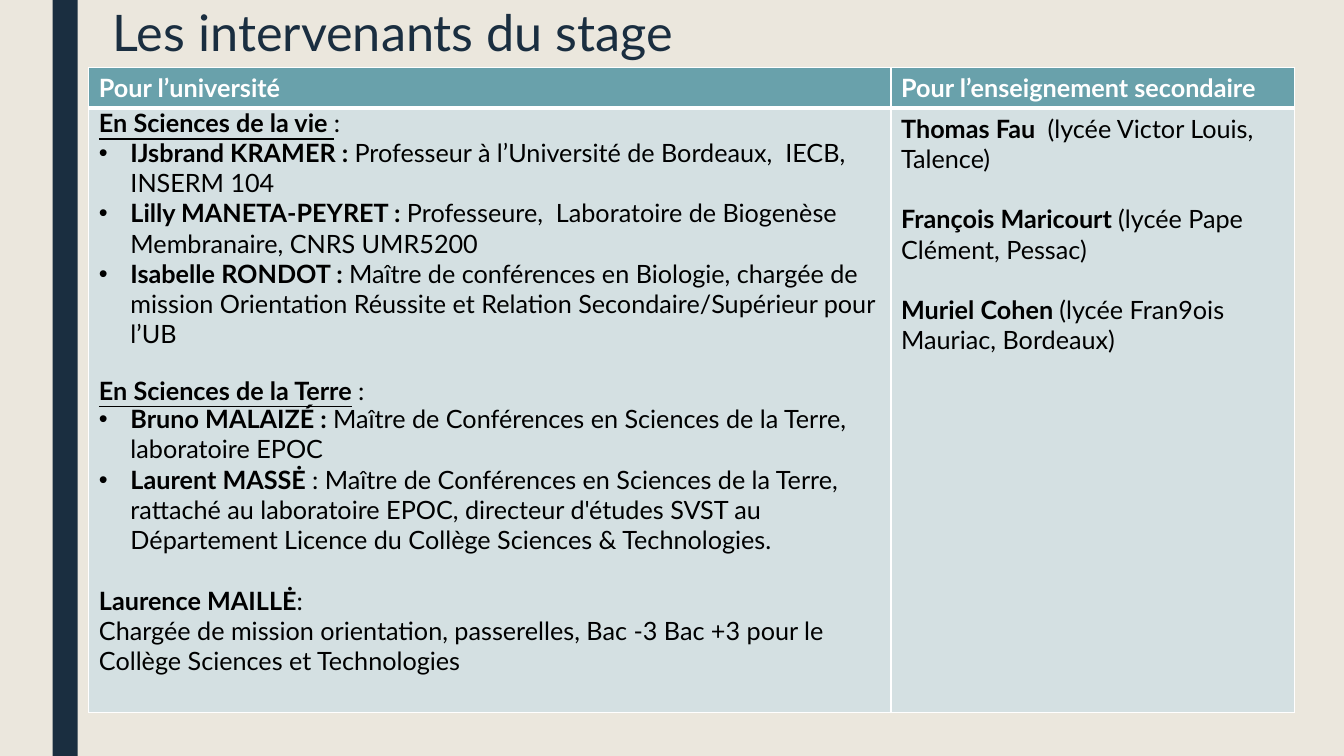
"""Build the slide that lists the speakers of the training course."""
from pptx import Presentation
from pptx.dml.color import RGBColor
from pptx.enum.shapes import MSO_SHAPE as SHAPE
from pptx.enum.text import MSO_ANCHOR as ANCHOR, PP_ALIGN as ALIGN
from pptx.oxml import parse_xml
from pptx.util import Pt

NS = 'xmlns:a="http://schemas.openxmlformats.org/drawingml/2006/main"'
NAVY, TEAL, PALE, WHITE, BLACK = "1A2E40", "69A1AB", "D4E0E2", "FFFFFF", "000000"


def color(code):
    """Turn a hex string into a colour."""
    return RGBColor.from_string(code)


def add_run(para, text, size, code, bold=False, line=False):
    """Add one formatted run to a paragraph."""
    run = para.add_run()
    run.text = text
    font = run.font
    font.name, font.size, font.bold, font.underline = "Lato", Pt(size), bold, line
    font.color.rgb = color(code)


prs = Presentation()
prs.slide_width, prs.slide_height = Pt(960), Pt(540)
slide = prs.slides.add_slide(prs.slide_layouts[5])
slide.background.fill.solid()
slide.background.fill.fore_color.rgb = color("EBE7DD")

bar = slide.shapes.add_shape(SHAPE.RECTANGLE, Pt(37.5), Pt(0), Pt(18), Pt(540))
bar.shadow.inherit = False
bar.fill.solid()
bar.fill.fore_color.rgb = color(NAVY)
bar.line.fill.background()

title = slide.shapes.title
title.left, title.top, title.width, title.height = Pt(73.5), Pt(1.5), Pt(792), Pt(47.5)
frame = title.text_frame
frame.word_wrap = True
frame.vertical_anchor = ANCHOR.MIDDLE
para = frame.paragraphs[0]
para.alignment, para.line_spacing = ALIGN.LEFT, 0.89
add_run(para, "Les intervenants du stage", 36, NAVY)

# Each entry: kind, bold text, plain text, space before, line spacing
staff = [
    ("head", "En Sciences de la vie ", ":", 0, 0.8),
    ("item", "IJsbrand KRAMER : ",
     "Professeur à l’Université de Bordeaux,  IECB, INSERM 104", 0, 1),
    ("item", "Lilly MANETA-PEYRET : ",
     "Professeure,  Laboratoire de Biogenèse Membranaire, CNRS UMR5200", 0, 1),
    ("item", "Isabelle RONDOT : ",
     "Maître de conférences en Biologie, chargée de mission Orientation Réussite "
     "et Relation Secondaire/Supérieur pour l’UB", 0, 1),
    ("head", "En Sciences de la Terre", " :", 26, 0.6),
    ("item", "Bruno MALAIZÉ : ",
     "Maître de Conférences en Sciences de la Terre, laboratoire EPOC", 0, 1),
    ("item", "Laurent MASSĖ ",
     ": Maître de Conférences en Sciences de la Terre, rattaché au laboratoire EPOC, "
     "directeur d'études SVST au Département Licence du Collège Sciences & Technologies.",
     0, 1),
    ("text", "Laurence MAILLĖ", ":", 21.6, 1),
    ("text", "", "Chargée de mission orientation, passerelles, Bac -3 Bac +3 pour le "
     "Collège Sciences et Technologies", 0, 1),
]
school = [
    ("text", "Thomas Fau  ", "(lycée Victor Louis, Talence)", 0, 1),
    ("text", "François Maricourt ", "(lycée Pape Clément, Pessac)", 21.6, 1),
    ("text", "Muriel Cohen ", "(lycée Fran9ois Mauriac, Bordeaux)", 21.6, 1),
]
rows = [
    [[("text", "Pour l’université", "", 0, 1)],
     [("text", "Pour l’enseignement secondaire", "", 0, 1)]],
    [staff, school],
]
looks = [(TEAL, WHITE, {"L": 1, "R": 1, "T": 1, "B": 3}),
         (PALE, BLACK, {"L": 1, "R": 1, "T": 3, "B": 1})]

table = slide.shapes.add_table(2, 2, Pt(63.5), Pt(48.5), Pt(861), Pt(459.5)).table
for col, width in zip(table.columns, (573, 288)):
    col.width = Pt(width)
for row, height in zip(table.rows, (28, 431.5)):
    row.height = Pt(height)

for r, (row, (fill, ink, edges)) in enumerate(zip(rows, looks)):
    for c, entries in enumerate(row):
        cell = table.cell(r, c)
        cell.fill.solid()
        cell.fill.fore_color.rgb = color(fill)
        props = cell._tc.get_or_add_tcPr()
        for i, (side, width) in enumerate(edges.items()):
            props.insert(i, parse_xml(
                f'<a:ln{side} {NS} w="{Pt(width)}"><a:solidFill>'
                f'<a:srgbClr val="{WHITE}"/></a:solidFill></a:ln{side}>'))
        frame = cell.text_frame
        for i, (kind, bold, plain, gap, lead) in enumerate(entries):
            para = frame.add_paragraph() if i else frame.paragraphs[0]
            para.space_before, para.line_spacing = Pt(gap), lead
            if kind == "item":
                form = para._p.get_or_add_pPr()
                form.set("marL", str(Pt(22.5)))
                form.set("indent", str(Pt(-22.5)))
                form.append(parse_xml(f'<a:buFont {NS} typeface="Arial"/>'))
                form.append(parse_xml(f'<a:buChar {NS} char="•"/>'))
            if bold:
                add_run(para, bold, 18, ink, True, kind == "head")
            if plain:
                add_run(para, plain, 18, ink)

prs.save("out.pptx")
